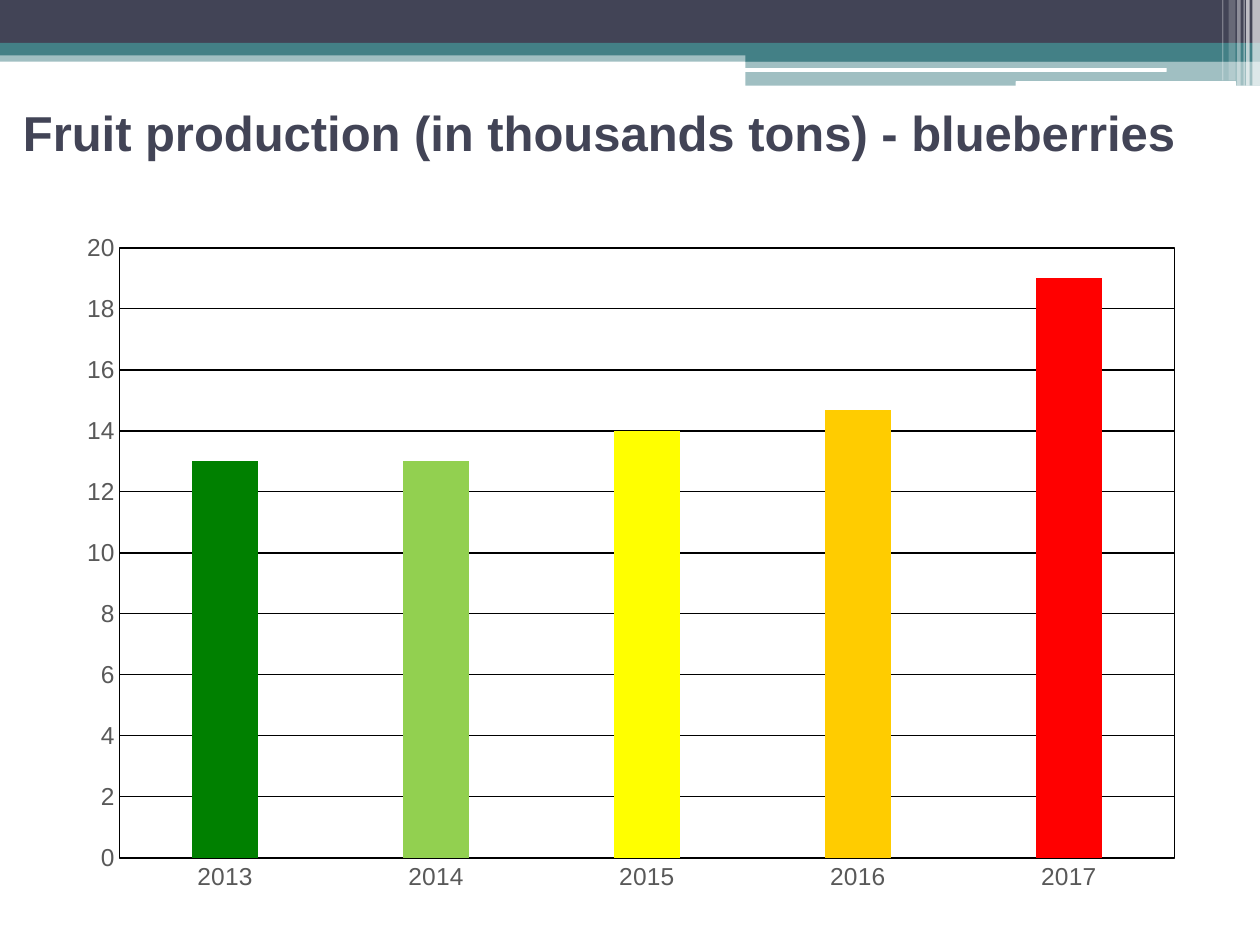
"""Build a slide with a column chart of blueberry production by year."""
from lxml import etree
from pptx import Presentation
from pptx.chart.data import CategoryChartData
from pptx.dml.color import RGBColor
from pptx.enum.chart import XL_CHART_TYPE, XL_TICK_MARK
from pptx.enum.shapes import MSO_SHAPE
from pptx.enum.text import MSO_ANCHOR
from pptx.oxml import parse_xml
from pptx.oxml.ns import nsdecls, qn
from pptx.util import Pt

COLORS = {
    "navy": "424456", "teal": "438086", "white": "FFFFFF", "black": "000000",
    "label": "595959", "green": "008000", "lime": "92D050", "yellow": "FFFF00",
    "amber": "FFCC00", "red": "FF0000",
}
TITLE = "Fruit production (in thousands tons) - blueberries"
PRODUCTION = [
    ("2013", 13, "green"), ("2014", 13, "lime"), ("2015", 14, "yellow"),
    ("2016", 14.7, "amber"), ("2017", 19, "red"),
]
BANDS = [
    (0, 28.8, 720, 6.5, "teal", 50),
    (0, 0, 720, 24.5, "navy", 100),
    (0, 24.5, 720, 7.2, "teal", 100),
    (426, 28, 294, 7.2, "teal", 100),
    (426, 35, 294, 14, "teal", 50),
]
ROUNDED_LINES = [(425.5, 38.9, 241.2, 2.2), (580.3, 46.4, 126, 2.9)]
STRIPES = [
    (715.7, 4.3, 49, 65), (712.1, 2, 49, 65), (710.6, 0.7, 49, 60),
    (707, 2, 49, 40), (702, 4, 46, 20), (698.4, 0.7, 46, 30),
]
PLOT_LAYOUT = {"x": 0.05, "y": 0.04, "w": 0.93, "h": 0.89}


def rgb(name):
    return RGBColor.from_string(COLORS[name])


def add_block(slide, left, top, width, height, color, opacity=100, kind=MSO_SHAPE.RECTANGLE):
    block = slide.shapes.add_shape(kind, Pt(left), Pt(top), Pt(width), Pt(height))
    block.shadow.inherit = False
    block.line.fill.background()
    block.fill.solid()
    block.fill.fore_color.rgb = rgb(color)
    if opacity < 100:
        hue = block.fill._xPr.find(".//" + qn("a:srgbClr"))
        etree.SubElement(hue, qn("a:alpha")).set("val", str(opacity * 1000))


def style_font(font, size, color, bold=False):
    font.name = "Arial"
    font.size = Pt(size)
    font.bold = bold
    font.color.rgb = rgb(color)


def add_text(slide, text, left, top, width, height, size, color, bold=False):
    frame = slide.shapes.add_textbox(Pt(left), Pt(top), Pt(width), Pt(height)).text_frame
    frame.word_wrap = True
    frame.vertical_anchor = MSO_ANCHOR.MIDDLE
    run = frame.paragraphs[0].add_run()
    run.text = text
    style_font(run.font, size, color, bold)


def set_line(line, color):
    line.color.rgb = rgb(color)
    line.width = Pt(0.75)


def frame_plot(chart):
    plot_area = chart._chartSpace.find(".//" + qn("c:plotArea"))
    for layout in plot_area.findall(qn("c:layout")):
        plot_area.remove(layout)
    modes = "".join(f'<c:{key}Mode val="edge"/>' for key in "xy")
    sizes = "".join(f'<c:{key} val="{value}"/>' for key, value in PLOT_LAYOUT.items())
    plot_area.insert(0, parse_xml(
        f'<c:layout {nsdecls("c")}><c:manualLayout><c:layoutTarget val="inner"/>'
        f"{modes}{sizes}</c:manualLayout></c:layout>"))
    plot_area.append(parse_xml(
        f'<c:spPr {nsdecls("c", "a")}><a:noFill/><a:ln w="{Pt(0.75)}"><a:solidFill>'
        f'<a:srgbClr val="{COLORS["black"]}"/></a:solidFill></a:ln></c:spPr>'))


def add_production_chart(slide):
    years, tons, fills = zip(*PRODUCTION)
    data = CategoryChartData()
    data.categories = years
    data.add_series("Series 1", tons)
    chart = slide.shapes.add_chart(
        XL_CHART_TYPE.COLUMN_CLUSTERED, Pt(36), Pt(126), Pt(648), Pt(391.7), data).chart
    chart.has_legend = False
    chart.has_title = False
    chart.font.name = "Cambria"
    chart.font.size = Pt(10)
    chart.font.color.rgb = rgb("black")
    plot = chart.plots[0]
    plot.gap_width = 219
    plot.overlap = -27
    plot.vary_by_categories = False
    for index, color in enumerate(fills):
        column = plot.series[0].points[index].format.fill
        column.solid()
        column.fore_color.rgb = rgb(color)
    for axis in (chart.category_axis, chart.value_axis):
        axis.major_tick_mark = axis.minor_tick_mark = XL_TICK_MARK.NONE
        style_font(axis.tick_labels.font, 14, "label")
    set_line(chart.category_axis.format.line, "black")
    scale = chart.value_axis
    scale.minimum_scale, scale.maximum_scale, scale.major_unit = 0, 20, 2
    scale.format.line.fill.background()
    set_line(scale.major_gridlines.format.line, "black")
    frame_plot(chart)


def main():
    deck = Presentation()
    deck.slide_width, deck.slide_height = Pt(720), Pt(540)
    slide = deck.slides.add_slide(deck.slide_layouts[6])
    for band in BANDS:
        add_block(slide, *band)
    for line in ROUNDED_LINES:
        add_block(slide, *line, "white", kind=MSO_SHAPE.ROUNDED_RECTANGLE)
    for left, width, height, opacity in STRIPES:
        add_block(slide, left, 0, width, height, "white", opacity)
    add_text(slide, TITLE, 6, 48.5, 702, 54, size=28, color="navy", bold=True)
    add_production_chart(slide)
    deck.save("out.pptx")


if __name__ == "__main__":
    main()
